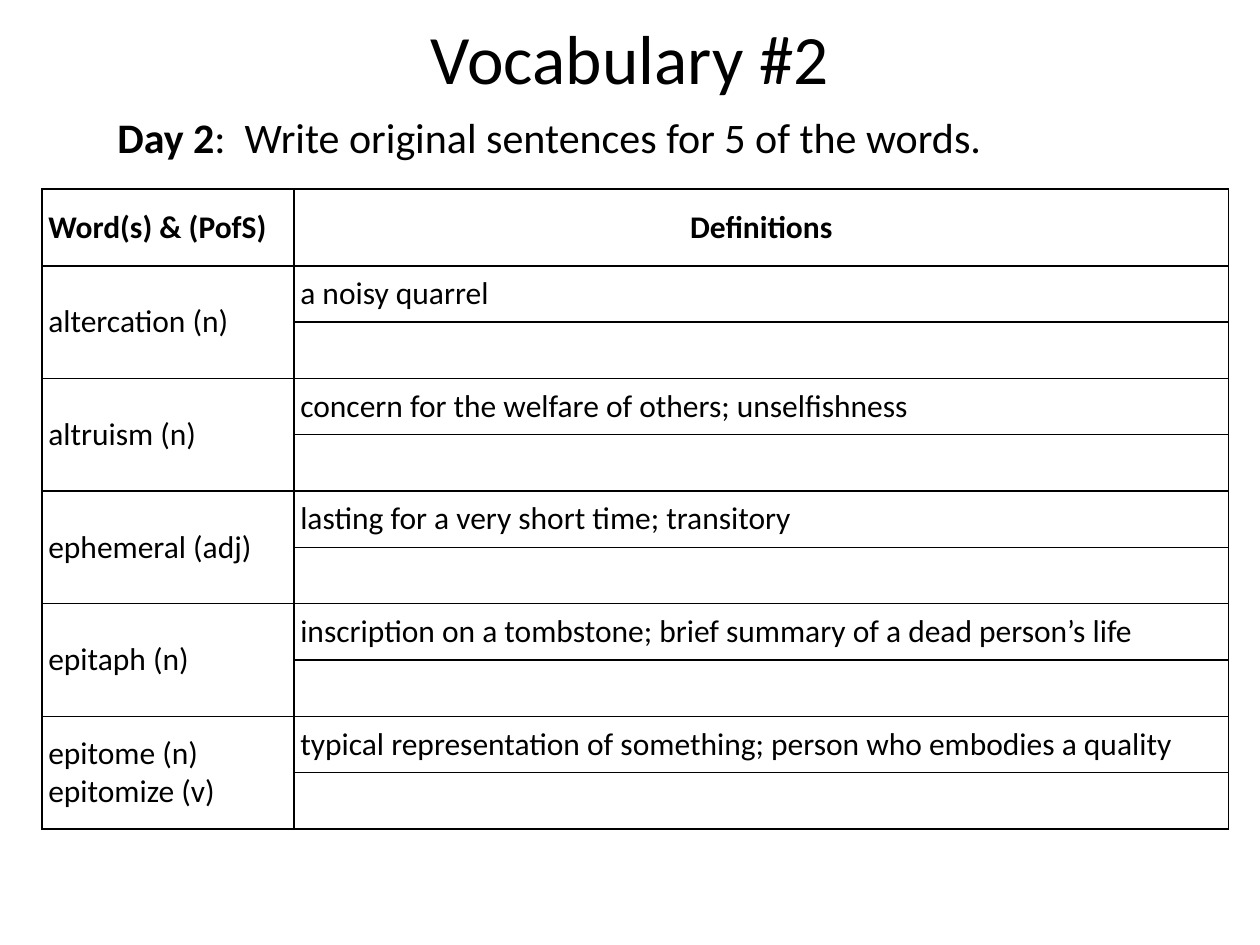
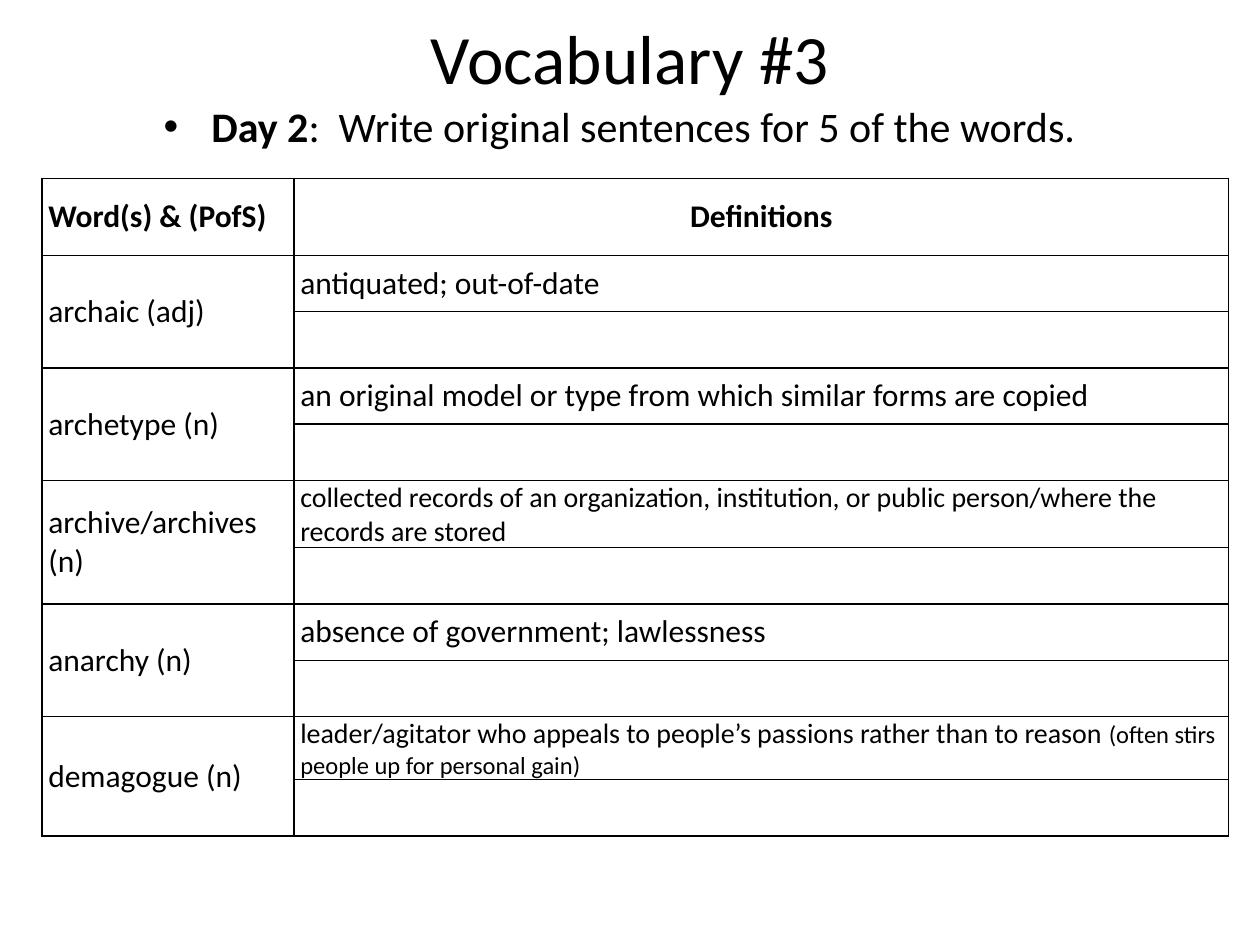
from lxml import etree
from pptx import Presentation
from pptx.dml.color import RGBColor
from pptx.enum.text import MSO_ANCHOR, PP_ALIGN
from pptx.oxml.ns import qn
from pptx.util import Inches, Pt

LEFT, CENTER = PP_ALIGN.LEFT, PP_ALIGN.CENTER
TOP, MIDDLE = MSO_ANCHOR.TOP, MSO_ANCHOR.MIDDLE

COLORS = {"text": "000000", "border": "000000"}
FONT = "Calibri"
GRID_COLUMNS, GRID_ROWS = 120, 90
HEADINGS = ("Word(s) & (PofS)", "Definitions")
TASK = (("Day 2", {"bold": True}),
        (":  Write original sentences for 5 of the words.", {}))

# A definition is a list of (text, format) runs
VOCABULARY = (
    {
        "title": "Vocabulary #2",
        "task": {"column": 10, "row": 10, "height": 8},
        "table_row": 18,
        "entries": (
            ("altercation (n)", [("a noisy quarrel", {})]),
            ("altruism (n)", [("concern for the welfare of others; unselfishness", {})]),
            ("ephemeral (adj)", [("lasting for a very short time; transitory", {})]),
            ("epitaph (n)",
             [("inscription on a tombstone; brief summary of a dead person’s life", {})]),
            ("epitome (n)\nepitomize (v)",
             [("typical representation of something; person who embodies a quality", {})]),
        ),
    },
    {
        "title": "Vocabulary #3",
        "task": {"column": 5, "row": 9, "height": 6, "align": CENTER, "bullet": "•"},
        "table_row": 17,
        "entries": (
            ("archaic (adj)", [("antiquated; out-of-date", {})]),
            ("archetype (n)",
             [("an original model or type from which similar forms are copied", {})]),
            ("archive/archives\n(n)",
             [("collected records of an organization, institution, or public person/"
               "where the records are stored", {"size": 16})]),
            ("anarchy (n)", [("absence of government; lawlessness", {})]),
            ("demagogue (n)",
             [("leader/agitator who appeals to people’s passions rather than to reason ",
               {"size": 16}),
              ("(often stirs people up for personal gain)", {"size": 14})]),
        ),
    },
)


def add_text(paragraph, text, size=18, bold=False, align=LEFT):
    """Append one formatted run to a paragraph."""
    paragraph.alignment = align
    run = paragraph.add_run()
    run.text = text
    run.font.name = FONT
    run.font.size = Pt(size)
    run.font.bold = bold
    run.font.color.rgb = RGBColor.from_string(COLORS["text"])


class VocabularyDeck:
    def __init__(self):
        self.presentation = Presentation()
        self.presentation.slide_width = Inches(10)
        self.presentation.slide_height = Inches(7.5)
        self.slide = None

    def across(self, columns):
        return round(self.presentation.slide_width * columns / GRID_COLUMNS)

    def down(self, rows):
        return round(self.presentation.slide_height * rows / GRID_ROWS)

    def new_slide(self):
        self.slide = self.presentation.slides.add_slide(self.presentation.slide_layouts[6])

    def text_box(self, column, row, width, height, anchor=TOP):
        box = self.slide.shapes.add_textbox(
            self.across(column), self.down(row), self.across(width), self.down(height))
        box.text_frame.word_wrap = True
        box.text_frame.vertical_anchor = anchor
        return box.text_frame.paragraphs[0]

    def title(self, text):
        paragraph = self.text_box(6, 0, 108, 10.8, anchor=MIDDLE)
        add_text(paragraph, text, size=39.6, align=CENTER)

    def task(self, column, row, height, align=LEFT, bullet=None):
        paragraph = self.text_box(column, row, 108, height)
        for text, style in TASK:
            add_text(paragraph, text, size=24, align=align, **style)
        # Hanging indent, with a bullet where one is wanted
        properties = paragraph._p.get_or_add_pPr()
        properties.set("marL", str(Inches(0.38)))
        properties.set("indent", str(-Inches(0.38)))
        if bullet:
            etree.SubElement(properties, qn("a:buFont"), typeface="Arial")
            etree.SubElement(properties, qn("a:buChar"), char=bullet)
        else:
            etree.SubElement(properties, qn("a:buNone"))

    def style_cell(self, cell):
        cell.vertical_anchor = MIDDLE
        cell.margin_left = cell.margin_right = Inches(0.05)
        cell.margin_top = cell.margin_bottom = 0
        properties = cell._tc.get_or_add_tcPr()
        for side in ("lnL", "lnR", "lnT", "lnB"):
            line = etree.SubElement(properties, qn(f"a:{side}"), w=str(Pt(1)))
            fill = etree.SubElement(line, qn("a:solidFill"))
            etree.SubElement(fill, qn("a:srgbClr"), val=COLORS["border"])
        cell.fill.background()

    def table(self, row, entries):
        header_height, entry_height = 7.32, 10.73
        row_count = 1 + 2 * len(entries)
        height = header_height + entry_height * len(entries)
        table = self.slide.shapes.add_table(
            row_count, 2, self.across(4), self.down(row),
            self.across(113), self.down(height)).table
        table.first_row = table.horz_banding = False
        for column, width in zip(table.columns, (24, 89)):
            column.width = self.across(width)
        for index, table_row in enumerate(table.rows):
            table_row.height = self.down(entry_height / 2 if index else header_height)
        for cell in table.iter_cells():
            self.style_cell(cell)

        # Header row
        for index, (heading, align) in enumerate(zip(HEADINGS, (LEFT, CENTER))):
            add_text(table.cell(0, index).text_frame.paragraphs[0],
                     heading, bold=True, align=align)

        # Each word spans its definition and a blank line for the sentence
        for index, (word, definition) in enumerate(entries):
            top = 1 + 2 * index
            word_cell = table.cell(top, 0)
            word_cell.merge(table.cell(top + 1, 0))
            frame = word_cell.text_frame
            for number, line in enumerate(word.split("\n")):
                add_text(frame.add_paragraph() if number else frame.paragraphs[0], line)
            for text, style in definition:
                add_text(table.cell(top, 1).text_frame.paragraphs[0], text, **style)


def main():
    deck = VocabularyDeck()
    for lesson in VOCABULARY:
        deck.new_slide()
        deck.title(lesson["title"])
        deck.task(**lesson["task"])
        deck.table(lesson["table_row"], lesson["entries"])
    deck.presentation.save("out.pptx")


if __name__ == "__main__":
    main()
